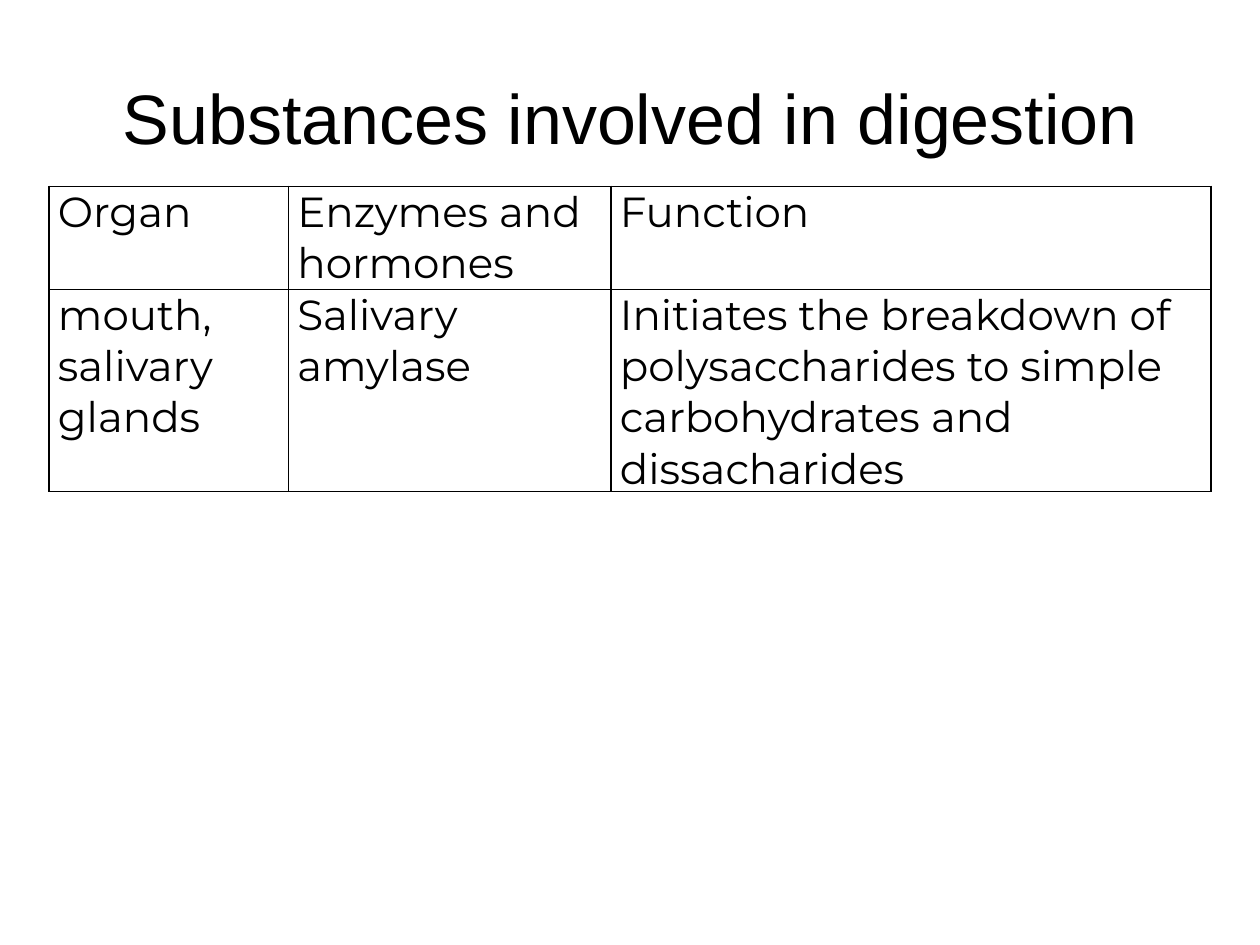
from lxml import etree
from pptx import Presentation
from pptx.dml.color import RGBColor
from pptx.enum.text import MSO_ANCHOR, PP_ALIGN
from pptx.oxml.ns import qn
from pptx.util import Inches, Pt

CENTER = PP_ALIGN.CENTER
LEFT = PP_ALIGN.LEFT
MIDDLE = MSO_ANCHOR.MIDDLE
TOP = MSO_ANCHOR.TOP
BLANK_LAYOUT = 6


def color(hex_string):
    return RGBColor.from_string(hex_string)


class SlideBuilder:
    ink = "000000"
    title_font, title_size = "Arial", 40
    table_font, table_size = "Montserrat", 24
    border_width = 1
    cell_margin = 0.07

    def __init__(self, slide):
        self.slide = slide

    def set_text(self, text_frame, text, font_name, size, alignment):
        text_frame.word_wrap = True
        paragraph = text_frame.paragraphs[0]
        paragraph.text = text
        paragraph.alignment = alignment
        paragraph.font.name = font_name
        paragraph.font.size = Pt(size)
        paragraph.font.color.rgb = color(self.ink)

    def title(self, text, left, top, width, height):
        shape = self.slide.shapes.add_textbox(
            Inches(left), Inches(top), Inches(width), Inches(height))
        shape.text_frame.vertical_anchor = MIDDLE
        self.set_text(shape.text_frame, text, self.title_font, self.title_size, CENTER)

    def border(self, cell):
        properties = cell._tc.get_or_add_tcPr()
        for position, side in enumerate(("a:lnL", "a:lnR", "a:lnT", "a:lnB")):
            line = etree.Element(qn(side), w=str(Pt(self.border_width)))
            fill = etree.SubElement(line, qn("a:solidFill"))
            etree.SubElement(fill, qn("a:srgbClr"), val=self.ink)
            properties.insert(position, line)

    def table(self, rows, left, top, column_widths, row_heights):
        table = self.slide.shapes.add_table(
            len(rows), len(column_widths), Inches(left), Inches(top),
            Inches(sum(column_widths)), Inches(sum(row_heights))).table
        table.first_row = False
        table.horz_banding = False
        for column, width in zip(table.columns, column_widths):
            column.width = Inches(width)
        for row, height, texts in zip(table.rows, row_heights, rows):
            row.height = Inches(height)
            for cell, text in zip(row.cells, texts):
                cell.fill.background()
                cell.margin_left = cell.margin_right = Inches(self.cell_margin)
                cell.margin_top = cell.margin_bottom = 0
                cell.vertical_anchor = TOP
                self.set_text(cell.text_frame, text, self.table_font, self.table_size, LEFT)
                self.border(cell)


def main():
    presentation = Presentation()
    presentation.slide_width = Inches(10)
    presentation.slide_height = Inches(7.5)
    layout = presentation.slide_layouts[BLANK_LAYOUT]
    builder = SlideBuilder(presentation.slides.add_slide(layout))

    # Heading
    builder.title("Substances involved in digestion", 0.5, 0.3, 9, 1.25)

    # Digestion table
    rows = [
        ("Organ", "Enzymes and hormones", "Function"),
        ("mouth, salivary glands", "Salivary amylase",
         "Initiates the breakdown of polysaccharides to simple "
         "carbohydrates and dissacharides"),
    ]
    builder.table(rows, 0.39, 1.48, (1.9, 2.56, 4.76), (0.82, 1.6))

    presentation.save("out.pptx")


if __name__ == "__main__":
    main()
